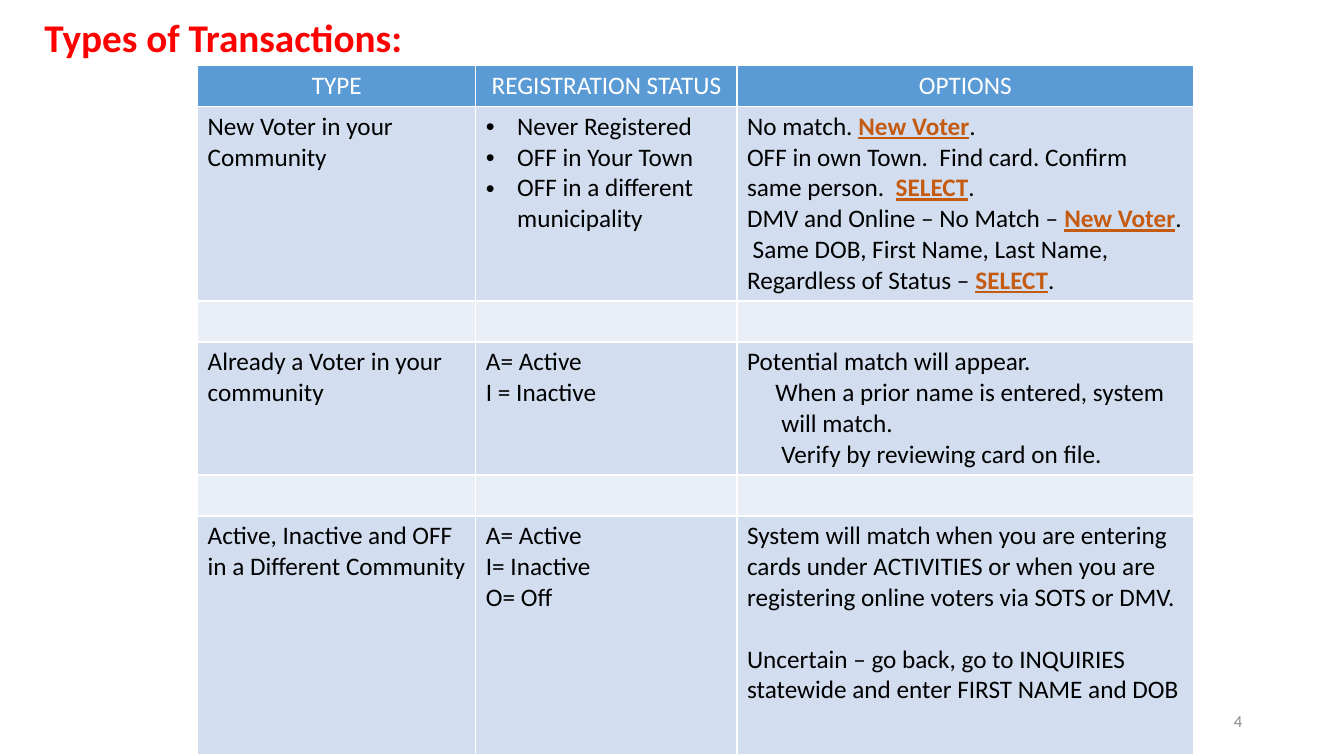
from pptx import Presentation
from pptx.dml.color import RGBColor as RGB
from pptx.enum.text import MSO_ANCHOR as Anchor, MSO_AUTO_SIZE as AutoSize, PP_ALIGN as Align
from pptx.oxml import parse_xml
from pptx.oxml.ns import nsdecls
from pptx.util import Inches, Pt

COLORS = {
    "title": "FF0000", "header": "5B9BD5", "band": "D2DEEF", "gap": "EAEFF7",
    "white": "FFFFFF", "text": "000000", "action": "C55A11", "number": "8C8C8C",
}

HEADERS = ["TYPE", "REGISTRATION STATUS", "OPTIONS"]
COL_WIDTHS = [2.76, 2.59, 4.53]
GAP_HEIGHT = 0.39

# Each case: row height, then one list of paragraphs per column.
# A paragraph is text or (text, options); *stars* enclose an action name.
BULLET = {"left": 0.31, "bullet": True}
CASES = [
    (1.86,
     ["New Voter in your Community"],
     [("Never Registered", BULLET), ("OFF in Your Town", BULLET),
      ("OFF in a different municipality", BULLET)],
     ["No match. *New Voter*.",
      "OFF in own Town.  Find card. Confirm same person.  *SELECT*.",
      "DMV and Online – No Match – *New Voter*.  Same DOB, First Name, "
      "Last Name, Regardless of Status – *SELECT*."]),
    (1.27,
     ["Already a Voter in your community"],
     ["A= Active", "I = Inactive"],
     ["Potential match will appear.",
      ("When a prior name is entered, system", {"left": 0.28}),
      ("will match.", {"left": 0.34}),
      ("Verify by reviewing card on file.", {"left": 0.34})]),
    (2.37,
     ["Active, Inactive and OFF in a Different Community"],
     ["A= Active", "I= Inactive", "O= Off"],
     ["System will match when you are entering cards under ACTIVITIES or "
      "when you are registering online voters via SOTS or DMV.",
      ("Uncertain – go back, go to INQUIRIES statewide and enter "
       "FIRST NAME and DOB", {"before": 22})]),
]


class SlideBuilder:
    font = "Calibri"
    size = 18

    def __init__(self, slide):
        self.slide = slide

    def style(self, r, color="text", size=None, bold=False, underline=False):
        r.font.name = self.font
        r.font.size = Pt(size or self.size)
        r.font.bold = bold
        r.font.underline = underline
        r.font.color.rgb = RGB.from_string(COLORS[color])

    def title(self, text, left, top, width, height):
        sp = self.slide.shapes.title
        sp.left, sp.top, sp.width, sp.height = map(Inches, (left, top, width, height))
        tf = sp.text_frame
        tf.text = text
        tf.auto_size = AutoSize.NONE
        tf.vertical_anchor = Anchor.TOP
        p = tf.paragraphs[0]
        p.alignment = Align.LEFT
        self.style(p.runs[0], "title", 28, bold=True)

    def page_number(self, text, left, top, width, height):
        sp = self.slide.shapes.add_textbox(*map(Inches, (left, top, width, height)))
        tf = sp.text_frame
        tf.word_wrap = True
        tf.vertical_anchor = Anchor.MIDDLE
        tf.text = text
        p = tf.paragraphs[0]
        p.alignment = Align.RIGHT
        self.style(p.runs[0], "number", 12)

    def paragraph(self, p, text, left=0, bullet=False, before=0):
        for i, part in enumerate(text.split("*")):
            if part:
                r = p.add_run()
                r.text = part
                action = i % 2 == 1
                self.style(r, "action" if action else "text", bold=action, underline=action)
        if before:
            p.space_before = Pt(before)
        if left:
            pPr = p._p.get_or_add_pPr()
            pPr.set("marL", str(Inches(left)))
            if bullet:
                pPr.set("indent", str(-Inches(left)))
                pPr.append(parse_xml(f'<a:buFont {nsdecls("a")} typeface="Arial"/>'))
                pPr.append(parse_xml(f'<a:buChar {nsdecls("a")} char="•"/>'))

    def cell_box(self, cell, fill):
        tcPr = cell._tc.get_or_add_tcPr()
        for side in "LRTB":
            tcPr.append(parse_xml(
                f'<a:ln{side} {nsdecls("a")} w="{Pt(1)}"><a:solidFill>'
                f'<a:srgbClr val="{COLORS["white"]}"/></a:solidFill></a:ln{side}>'))
        cell.fill.solid()
        cell.fill.fore_color.rgb = RGB.from_string(COLORS[fill])

    def table(self, left, top, col_widths, headers, cases):
        # Narrow empty rows separate the cases
        rows = [(GAP_HEIGHT, "header", headers)]
        for i, (height, *columns) in enumerate(cases):
            if i:
                rows.append((GAP_HEIGHT, "gap", [[]] * len(headers)))
            rows.append((height, "band", columns))
        total = sum(height for height, _, _ in rows)
        table = self.slide.shapes.add_table(
            len(rows), len(headers), Inches(left), Inches(top),
            Inches(sum(col_widths)), Inches(total)).table
        for col, width in zip(table.columns, col_widths):
            col.width = Inches(width)
        for row, (height, fill, contents) in zip(table.rows, rows):
            row.height = Inches(height)
            for cell, content in zip(row.cells, contents):
                self.cell_box(cell, fill)
                tf = cell.text_frame
                if fill == "header":
                    tf.text = content
                    p = tf.paragraphs[0]
                    p.alignment = Align.CENTER
                    self.style(p.runs[0], "white")
                    continue
                for i, item in enumerate(content):
                    text, options = (item, {}) if isinstance(item, str) else item
                    p = tf.add_paragraph() if i else tf.paragraphs[0]
                    self.paragraph(p, text, **options)


def main():
    prs = Presentation()
    prs.slide_width, prs.slide_height = Inches(13.33), Inches(7.5)
    builder = SlideBuilder(prs.slides.add_slide(prs.slide_layouts[5]))

    # Transactions table
    builder.table(1.96, 0.65, COL_WIDTHS, HEADERS, CASES)
    # Page number and title
    builder.page_number("4", 9.42, 6.95, 3, 0.4)
    builder.title("Types of Transactions:", 0.34, 0.08, 4.49, 0.57)

    prs.save("out.pptx")


if __name__ == "__main__":
    main()
